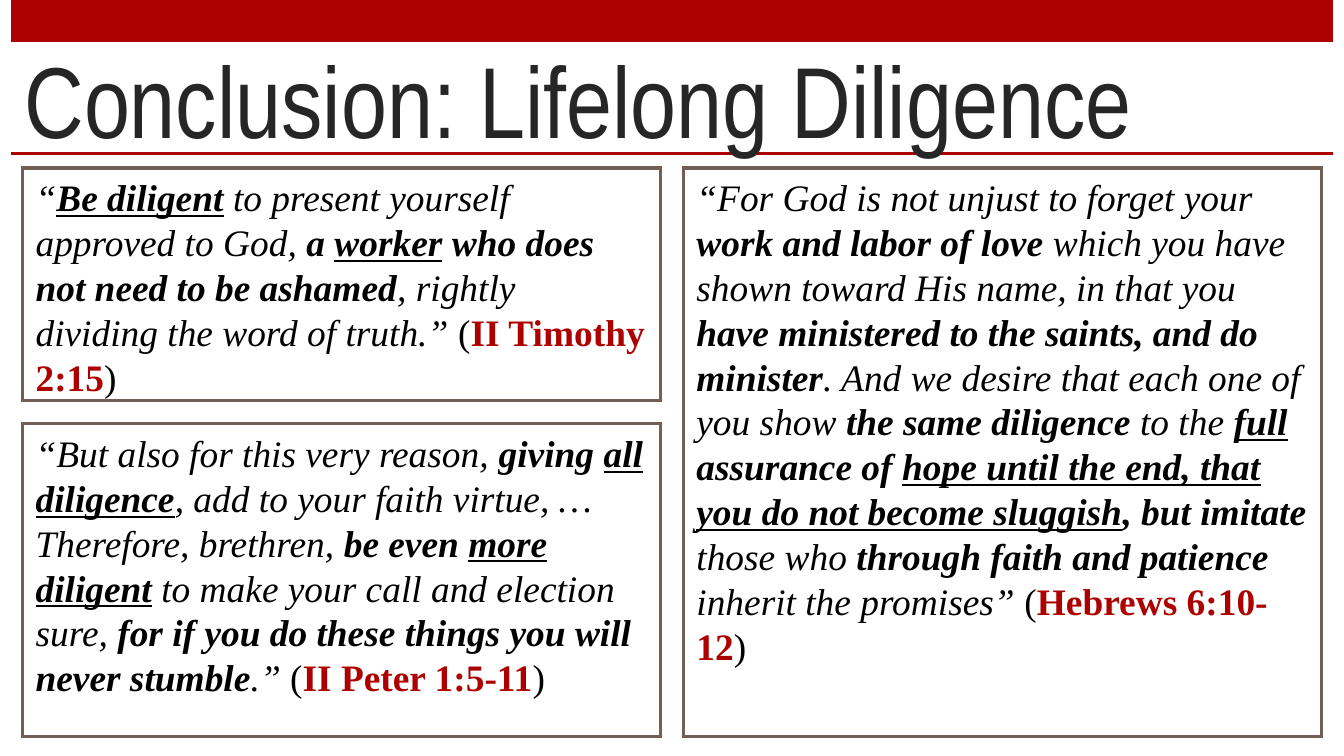
import pptx
import pptx.util
import pptx.dml.color
import pptx.enum.shapes
import pptx.enum.text
import pptx.oxml.ns
import lxml.etree
from dataclasses import dataclass

Pt = pptx.util.Pt
Color = pptx.dml.color.RGBColor.from_string


@dataclass(frozen=True)
class Theme:
    """Colours, fonts and type sizes of the slide."""
    red: str = "AD0101"
    ink: str = "262626"
    text: str = "000000"
    edge: str = "726056"
    head: str = "Arial Narrow"
    body: str = "Times New Roman"
    large: float = 54
    small: float = 20
    line: float = 1.75


THEME = Theme()

TIMOTHY = [
    ("“", "i"), ("Be diligent", "ibu"),
    (" to present yourself approved to God, ", "i"),
    ("a ", "ib"), ("worker", "ibu"), (" who does not need to be ashamed", "ib"),
    (", rightly dividing the word of truth.”", "i"),
    (" (", ""), ("II Timothy 2:15", "br"), (")", ""),
]
PETER = [
    ("“But also for this very reason, ", "i"),
    ("giving ", "ib"), ("all diligence", "ibu"),
    (", add to your faith virtue, … Therefore, brethren, ", "i"),
    ("be even ", "ib"), ("more diligent", "ibu"),
    (" to make your call and election sure, ", "i"),
    ("for if you do these things you will never stumble", "ib"), (".”", "i"),
    (" (", ""), ("II Peter 1:5-11", "br"), (")", ""),
]
HEBREWS = [
    ("“For God is not unjust to forget your ", "i"),
    ("work and labor of love", "ib"),
    (" which you have shown toward His name, in that you ", "i"),
    ("have ministered to the saints, and do minister", "ib"),
    (". And we desire that each one of you show ", "i"),
    ("the same diligence", "ib"), (" to the ", "i"), ("full", "ibu"),
    (" assurance of ", "ib"),
    ("hope until the end, that you do not become sluggish", "ibu"),
    (", but imitate", "ib"), (" those who ", "i"),
    ("through faith and patience", "ib"), (" inherit the promises”", "i"),
    (" (", ""), ("Hebrews 6:10-12", "br"), (")", ""),
]


def rect(slide, left, top, width, height):
    """Add a rectangle without shadow, measured in points."""
    kind = pptx.enum.shapes.MSO_SHAPE.RECTANGLE
    shape = slide.shapes.add_shape(kind, Pt(left), Pt(top), Pt(width), Pt(height))
    shape.shadow.inherit = False
    return shape


def bar(slide, left, top, width, height):
    """Add a solid red bar."""
    shape = rect(slide, left, top, width, height)
    shape.fill.solid()
    shape.fill.fore_color.rgb = Color(THEME.red)
    shape.line.fill.background()


def header(slide, left, top, width, height):
    """Place the top band, the rule and the title in the given box."""
    bar(slide, left, top, width, 22.5)
    bar(slide, left, top + height - 7, width, 1.5)
    box = slide.shapes.add_textbox(Pt(left), Pt(top), Pt(width), Pt(height))
    frame = box.text_frame
    frame.word_wrap = True
    frame.vertical_anchor = pptx.enum.text.MSO_ANCHOR.BOTTOM
    para = frame.paragraphs[0]
    para.text = "Conclusion: Lifelong Diligence"
    para.font.name = THEME.head
    para.font.size = Pt(THEME.large)
    para.font.color.rgb = Color(THEME.ink)


def border(shape):
    """Give a shape a plain outline with square corners."""
    shape.line.color.rgb = Color(THEME.edge)
    shape.line.width = Pt(THEME.line)
    line = shape.element.spPr.find(pptx.oxml.ns.qn("a:ln"))
    lxml.etree.SubElement(line, pptx.oxml.ns.qn("a:miter"), lim="800000")


def quote(slide, left, top, width, height, parts):
    """Place a framed verse; marks are i, b, u and r for red."""
    shape = rect(slide, left, top, width, height)
    shape.fill.background()
    border(shape)
    frame = shape.text_frame
    frame.word_wrap = True
    frame.vertical_anchor = pptx.enum.text.MSO_ANCHOR.TOP
    para = frame.paragraphs[0]
    para.alignment = pptx.enum.text.PP_ALIGN.LEFT
    para.font.name = THEME.body
    para.font.size = Pt(THEME.small)
    for text, marks in parts:
        run = para.add_run()
        run.text = text
        font = run.font
        font.italic = "i" in marks
        font.bold = "b" in marks
        font.underline = "u" in marks
        font.color.rgb = Color(THEME.red if "r" in marks else THEME.text)


def verses(slide, left, top, width, height):
    """Place two stacked verses beside one tall verse."""
    gap = 12
    half = (width - gap) / 2
    short, tall = 124.5, 167.5
    quote(slide, left + half + gap, top, half, height, HEBREWS)
    quote(slide, left, top, half, short, TIMOTHY)
    quote(slide, left, top + height - tall, half, tall, PETER)


def main():
    """Build and save the slide."""
    deck = pptx.Presentation()
    deck.slide_width, deck.slide_height = Pt(720), Pt(405)
    slide = deck.slides.add_slide(deck.slide_layouts[6])
    header(slide, 6, 0, 708, 88.5)
    verses(slide, 12, 90, 696, 304.5)
    deck.save("out.pptx")


if __name__ == "__main__":
    main()
